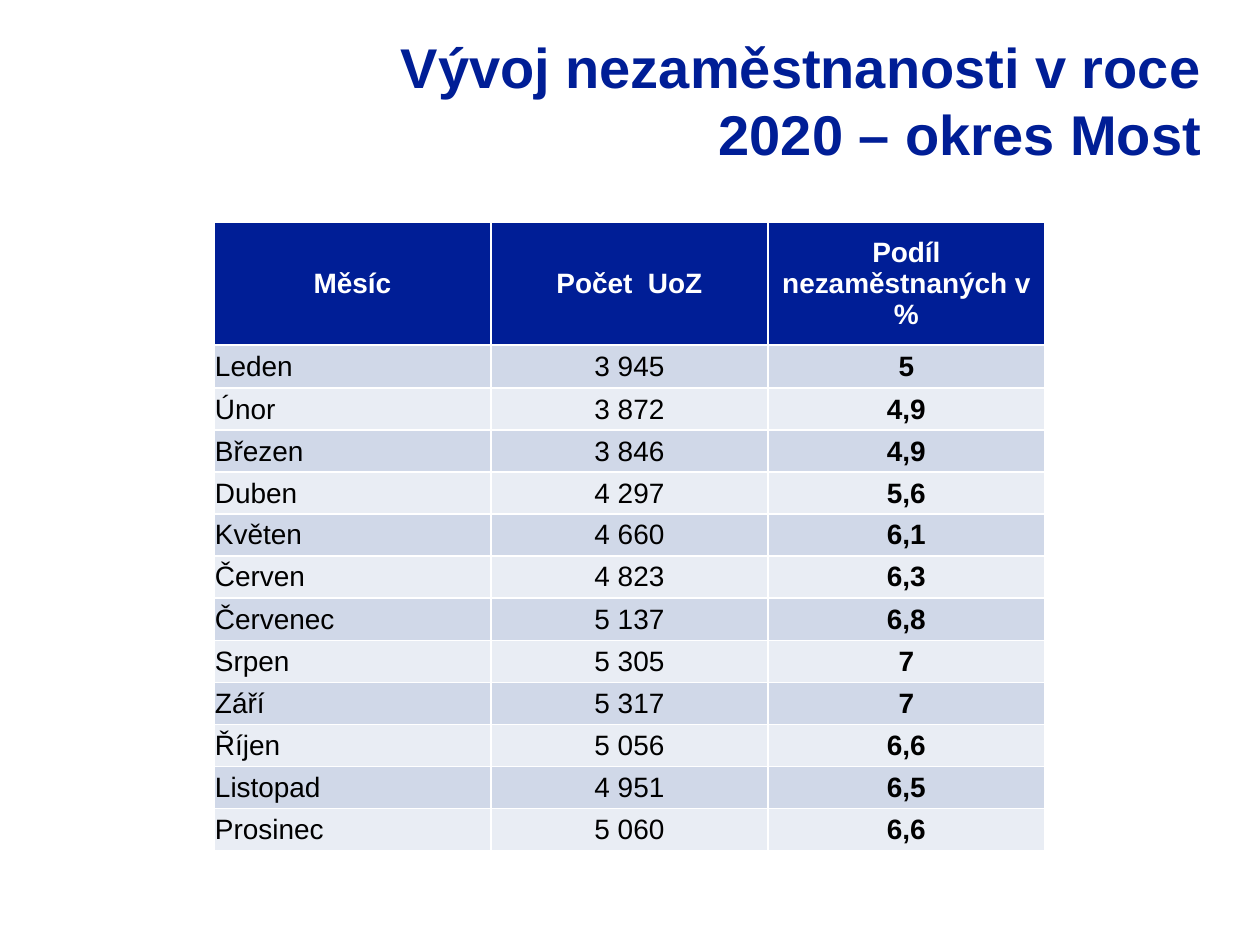
import pptx
import pptx.util
import pptx.dml.color
import pptx.enum.text
import pptx.oxml
import pptx.oxml.ns

# Content
TITLE = "Vývoj nezaměstnanosti v roce 2020 – okres Most"
HEAD = ("Měsíc", "Počet  UoZ", "Podíl nezaměstnaných v %")
MONTHS = [
    ("Leden", "3 945", "5"),
    ("Únor", "3 872", "4,9"),
    ("Březen", "3 846", "4,9"),
    ("Duben", "4 297", "5,6"),
    ("Květen", "4 660", "6,1"),
    ("Červen", "4 823", "6,3"),
    ("Červenec", "5 137", "6,8"),
    ("Srpen", "5 305", "7"),
    ("Září", "5 317", "7"),
    ("Říjen", "5 056", "6,6"),
    ("Listopad", "4 951", "6,5"),
    ("Prosinec", "5 060", "6,6"),
]

# Look
NAVY, WHITE, BLACK = "001E96", "FFFFFF", "000000"
BANDS = ("E9EDF4", "D0D8E8")
COL_W, HEAD_H, ROW_H = 277, 123, 42
TALL = (1, 7)  # rows one px taller
THICK = (0, 6)  # rows with a heavier line below
ALIGN = pptx.enum.text.PP_ALIGN
ANCHOR = pptx.enum.text.MSO_ANCHOR


def px(n):
    return pptx.util.Emu(round(n * 914400 / 126))


def color(code):
    return pptx.dml.color.RGBColor.from_string(code)


def write(frame, text, size, code, bold, align):
    para = frame.paragraphs[0]
    para.alignment = align
    run = para.add_run()
    run.text = text
    font = run.font
    font.name, font.size, font.bold = "Arial", pptx.util.Pt(size), bold
    font.color.rgb = color(code)


def border(cell, row):
    widths = {"L": 1, "R": 1, "T": 1.5 if row - 1 in THICK else 1,
              "B": 1.5 if row in THICK else 1}
    props = cell._tc.get_or_add_tcPr()
    for spot, (side, width) in enumerate(widths.items()):
        props.insert(spot, pptx.oxml.parse_xml(
            f'<a:ln{side} {pptx.oxml.ns.nsdecls("a")} w="{pptx.util.Pt(width)}">'
            f'<a:solidFill><a:srgbClr val="{WHITE}"/></a:solidFill></a:ln{side}>'))


def style(cell, row, col, text):
    head = row == 0
    cell.fill.solid()
    cell.fill.fore_color.rgb = color(NAVY if head else BANDS[row % 2])
    cell.vertical_anchor = ANCHOR.MIDDLE
    cell.margin_left = cell.margin_right = cell.margin_top = px(1)
    cell.margin_bottom = 0
    align = ALIGN.CENTER if head or col else ALIGN.LEFT
    write(cell.text_frame, text, 16, WHITE if head else BLACK, head or col == 2, align)
    border(cell, row)


def main():
    deck = pptx.Presentation()
    deck.slide_width, deck.slide_height = px(1260), px(945)
    slide = deck.slides.add_slide(deck.slide_layouts[6])

    # Title
    frame = slide.shapes.add_textbox(px(302), px(26), px(912), px(189)).text_frame
    frame.word_wrap = True
    frame.vertical_anchor = ANCHOR.TOP
    write(frame, TITLE, 32, NAVY, True, ALIGN.RIGHT)

    # Table of months
    rows = [HEAD] + MONTHS
    tall = [HEAD_H] + [ROW_H + (i in TALL) for i in range(1, len(rows))]
    table = slide.shapes.add_table(len(rows), len(HEAD), px(214), px(222),
                                   px(COL_W * len(HEAD)), px(sum(tall))).table
    for col in table.columns:
        col.width = px(COL_W)
    for r, texts in enumerate(rows):
        table.rows[r].height = px(tall[r])
        for c, text in enumerate(texts):
            style(table.cell(r, c), r, c, text)

    deck.save("out.pptx")


if __name__ == "__main__":
    main()
